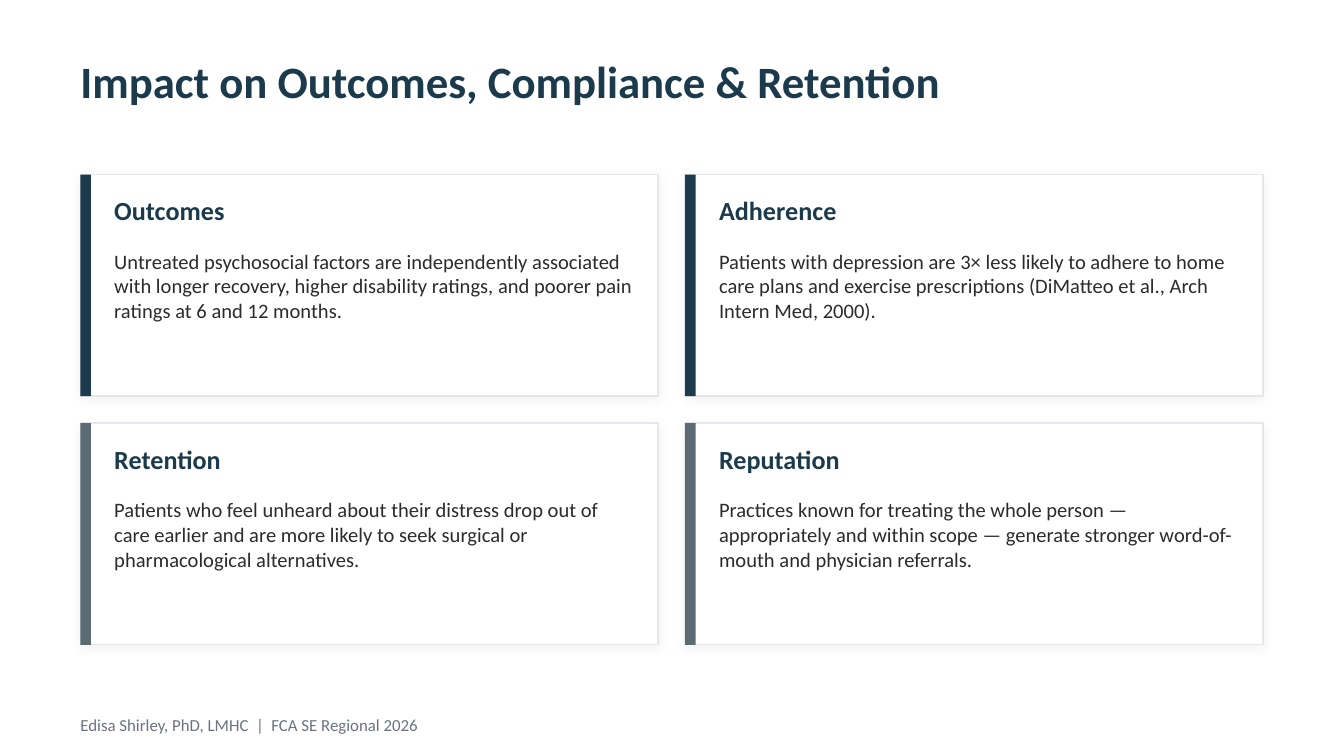
from lxml import etree
from pptx import Presentation
from pptx import util as u
from pptx.dml.color import RGBColor
from pptx.enum import shapes, text
from pptx.oxml import parse_xml
from pptx.oxml.ns import nsdecls

COLORS = {
    "navy": "1B3A4B",
    "slate": "5C6B73",
    "body": "2B2B2B",
    "footer": "6B7280",
    "border": "E5E7EB",
    "white": "FFFFFF",
    "shadow": "000000",
}
FONT = "Calibri"
MARGIN, CONTENT_W = 1.52, 22.35
CARD_TOP, CARD_W, CARD_H, GAP = 3.3, 10.92, 4.19, 0.51
CARDS = [
    ("Outcomes", "Untreated psychosocial factors are independently associated with longer "
     "recovery, higher disability ratings, and poorer pain ratings at 6 and 12 months.", "navy"),
    ("Adherence", "Patients with depression are 3× less likely to adhere to home care plans "
     "and exercise prescriptions (DiMatteo et al., Arch Intern Med, 2000).", "navy"),
    ("Retention", "Patients who feel unheard about their distress drop out of care earlier "
     "and are more likely to seek surgical or pharmacological alternatives.", "slate"),
    ("Reputation", "Practices known for treating the whole person — appropriately and within "
     "scope — generate stronger word-of-mouth and physician referrals.", "slate"),
]


def rgb(name):
    """Return the named palette colour."""
    return RGBColor.from_string(COLORS[name])


def write(sp, content, size, color, bold=False, after=0):
    """Fill a shape with one formatted paragraph."""
    tf = sp.text_frame
    tf.text = content
    tf.word_wrap = True
    tf.auto_size = text.MSO_AUTO_SIZE.NONE
    tf.vertical_anchor = text.MSO_ANCHOR.TOP
    tf.margin_left = tf.margin_top = tf.margin_right = tf.margin_bottom = 0
    p = tf.paragraphs[0]
    p.alignment = text.PP_ALIGN.LEFT
    p.space_before, p.space_after = u.Pt(0), u.Pt(after)
    r = p.runs[0]
    r.font.name, r.font.size, r.font.bold = FONT, u.Pt(size), bold
    r.font.color.rgb = rgb(color)


def add_text(s, box, *args, **style):
    """Add a text box in the given box."""
    write(s.shapes.add_textbox(*map(u.Cm, box)), *args, **style)


def add_rect(s, box, fill):
    """Add a plain filled rectangle."""
    sp = s.shapes.add_shape(shapes.MSO_SHAPE.RECTANGLE, *map(u.Cm, box))
    sp.shadow.inherit = False
    sp.fill.solid()
    sp.fill.fore_color.rgb = rgb(fill)
    sp.line.fill.background()
    return sp


def add_soft_shadow(sp):
    """Give a shape a faint shadow straight below it."""
    effects = sp.element.spPr.find("{*}effectLst")
    effects.append(parse_xml(
        f'<a:outerShdw {nsdecls("a")} blurRad="{u.Pt(6)}" dist="{u.Pt(1)}" dir="5400000" '
        f'algn="bl" rotWithShape="0"><a:srgbClr val="{COLORS["shadow"]}">'
        '<a:alpha val="5000"/></a:srgbClr></a:outerShdw>'))


def add_title(s, box, content):
    """Place and format the title placeholder."""
    sp = s.shapes.title
    sp.left, sp.top, sp.width, sp.height = map(u.Cm, box)
    write(sp, content, 24, "navy", bold=True)


def add_card(s, box, heading, body, accent):
    """Draw a bordered card with an accent bar, heading and body."""
    x, y, w, h = box
    panel = add_rect(s, box, "white")
    panel.line.color.rgb = rgb("border")
    panel.line.width = u.Pt(0.75)
    add_soft_shadow(panel)
    add_rect(s, (x, y, 0.2, h), accent)
    text_x, text_w = x + 0.64, w - 1.02
    add_text(s, (text_x, y + 0.38, text_w, 0.89), heading, 14, "navy", bold=True)
    add_text(s, (text_x, y + 1.4, text_w, 2.41), body, 11, "body", after=4)


def add_cards(s, left, top):
    """Lay the cards out in two columns."""
    for i, card in enumerate(CARDS):
        row, col = divmod(i, 2)
        box = (left + col * (CARD_W + GAP), top + row * (CARD_H + GAP), CARD_W, CARD_H)
        add_card(s, box, *card)


def main():
    """Build and save the presentation."""
    prs = Presentation()
    prs.slide_width, prs.slide_height = u.Cm(25.4), u.Cm(14.29)
    s = prs.slides.add_slide(prs.slide_layouts[5])
    s.background.fill.solid()
    s.background.fill.fore_color.rgb = rgb("white")
    add_title(s, (MARGIN, 1.02, CONTENT_W, 1.4), "Impact on Outcomes, Compliance & Retention")
    add_text(s, (MARGIN, 13.51, CONTENT_W, 0.64),
             "Edisa Shirley, PhD, LMHC  |  FCA SE Regional 2026", 9, "footer")
    add_cards(s, MARGIN, CARD_TOP)
    prs.save("out.pptx")


if __name__ == "__main__":
    main()
